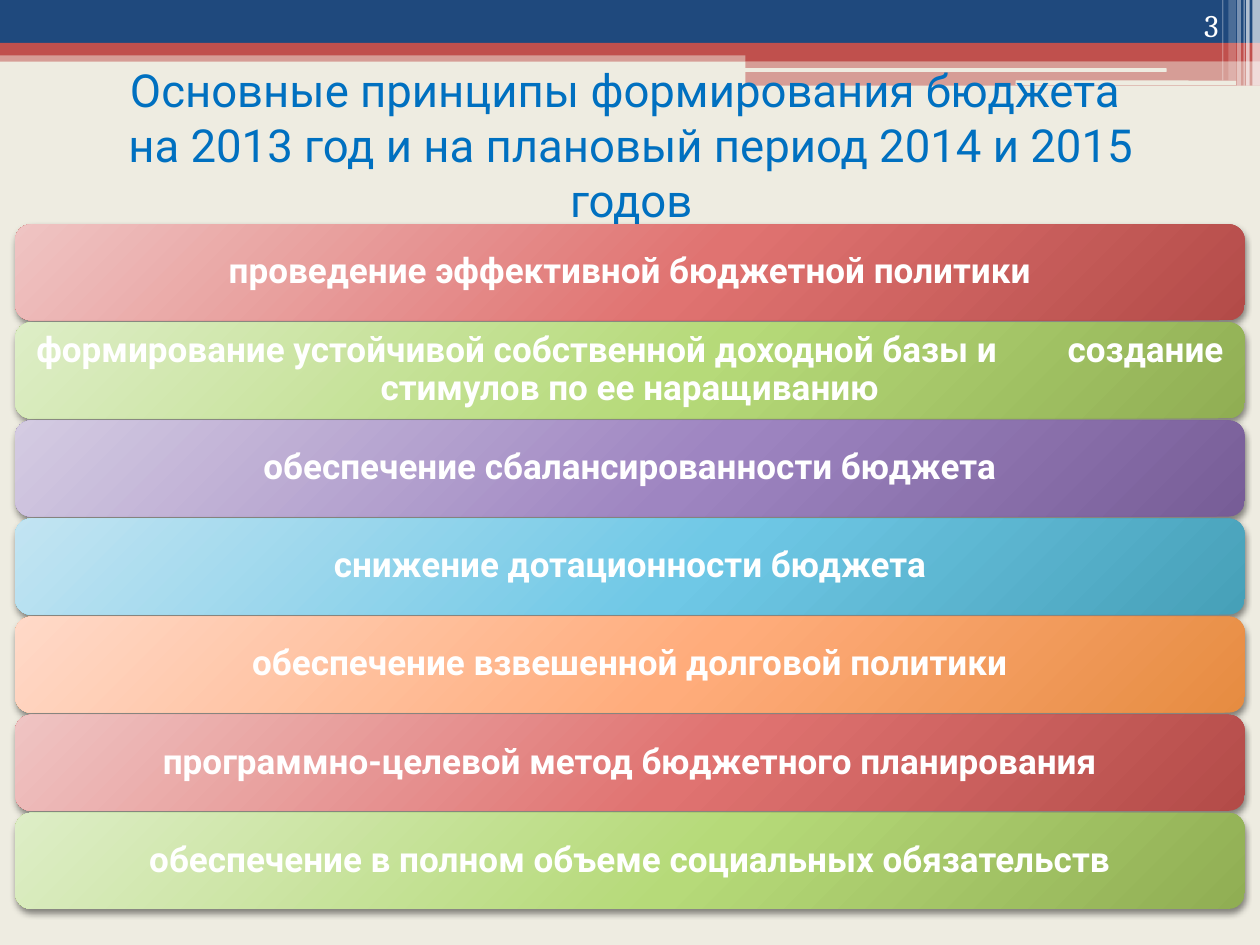
from dataclasses import dataclass

from lxml import etree
from pptx import Presentation
from pptx.dml.color import RGBColor
from pptx.enum import shapes, text
from pptx.oxml import parse_xml
from pptx.oxml.ns import nsdecls, qn
from pptx.util import Pt

COLORS = {
    "paper": "EEECE1", "navy": "1F497D", "brick": "C0504D",
    "white": "FFFFFF", "title": "0070C0", "shadow": "000000",
}
# Light, middle and dark tone of each gradient
GRADIENTS = {
    "red": ("EFC4C3", "E07371", "B34B48"),
    "green": ("DDEDC6", "B6DA79", "90AE53"),
    "violet": ("D4CBE2", "9E85C1", "775D97"),
    "blue": ("C2E4F2", "6FC8E6", "46A0B8"),
    "orange": ("FFD9C8", "FFAC7B", "E68C41"),
}
FONT = "Roboto"
ROW_LEFT, ROW_TOP, ROW_WIDTH, ROW_HEIGHT, ROW_PITCH = 8.64, 128.16, 702.72, 54.9, 56.05
WIDE_GAP = 35  # extra points after the space that stands at "|"


@dataclass(frozen=True)
class Bar:
    left: float
    top: float
    width: float
    height: float
    color: str
    opacity: int = 100
    rounded: bool = False


@dataclass(frozen=True)
class Principle:
    label: str
    gradient: str


HEADER_BARS = [
    Bar(0, 28.8, 720, 6.5, "brick", 50),
    Bar(0, 0, 720, 24.5, "navy"),
    Bar(0, 24.5, 720, 7.2, "brick"),
    Bar(426, 28, 294, 7, "brick"),
    Bar(426, 34.6, 294, 14.4, "brick", 50),
    Bar(425.5, 39, 241.2, 2.1, "paper", rounded=True),
    Bar(580.3, 46, 126, 2.7, "paper", rounded=True),
    Bar(715.7, 0, 4.3, 49, "white", 65),
    Bar(712.1, 0, 2.1, 49, "white", 65),
    Bar(710.6, 0, 0.7, 49, "white", 60),
    Bar(707, 0, 2.1, 49, "white", 40),
    Bar(702, 0, 4.3, 46, "white", 20),
    Bar(698.4, 0, 0.7, 46, "white", 30),
]
PRINCIPLES = [
    Principle("проведение эффективной бюджетной политики", "red"),
    Principle("формирование устойчивой собственной доходной базы и|"
              "создание стимулов по ее наращиванию", "green"),
    Principle("обеспечение сбалансированности бюджета", "violet"),
    Principle("снижение дотационности бюджета", "blue"),
    Principle("обеспечение взвешенной долговой политики", "orange"),
    Principle("программно-целевой метод бюджетного планирования", "red"),
    Principle("обеспечение в полном объеме социальных обязательств", "green"),
]


def rgb(name: str) -> RGBColor:
    return RGBColor.from_string(COLORS[name])


def format_runs(p, size: float, color: str, font: str = FONT, bold: bool = False) -> None:
    for r in p.runs:
        r.font.size = Pt(size)
        r.font.name = font
        r.font.bold = bold
        r.font.color.rgb = rgb(color)


def add_bar(slide, bar: Bar) -> None:
    kind = shapes.MSO_SHAPE.ROUNDED_RECTANGLE if bar.rounded else shapes.MSO_SHAPE.RECTANGLE
    sp = slide.shapes.add_shape(kind, Pt(bar.left), Pt(bar.top), Pt(bar.width), Pt(bar.height))
    sp.shadow.inherit = False
    sp.line.fill.background()
    sp.fill.solid()
    sp.fill.fore_color.rgb = rgb(bar.color)
    if bar.opacity < 100:
        color = sp.fill._xPr.find(f".//{qn('a:srgbClr')}")
        etree.SubElement(color, qn("a:alpha"), val=str(bar.opacity * 1000))


def set_glow_gradient(sp, tones: tuple[str, str, str]) -> None:
    """Fill with a circular gradient centred beyond the top left, above a soft shadow."""
    stops = "".join(f'<a:gs pos="{pos * 1000}"><a:srgbClr val="{tone}"/></a:gs>'
                    for pos, tone in zip((0, 55, 100), tones))
    fill = parse_xml(
        f'<a:gradFill {nsdecls("a")} rotWithShape="1"><a:gsLst>{stops}</a:gsLst>'
        '<a:path path="circle"><a:fillToRect l="-40000" t="-90000" r="140000" b="190000"/>'
        '</a:path></a:gradFill>')
    sp._element.spPr.find(qn("a:prstGeom")).addnext(fill)
    effects = sp._element.spPr.find(qn("a:effectLst"))
    effects.append(parse_xml(
        f'<a:outerShdw {nsdecls("a")} blurRad="{Pt(4)}" dist="{Pt(2)}" dir="5400000" '
        f'rotWithShape="0"><a:srgbClr val="{COLORS["shadow"]}"><a:alpha val="45000"/>'
        '</a:srgbClr></a:outerShdw>'))


def add_principle(slide, index: int, principle: Principle) -> None:
    sp = slide.shapes.add_shape(
        shapes.MSO_SHAPE.ROUNDED_RECTANGLE, Pt(ROW_LEFT), Pt(ROW_TOP + index * ROW_PITCH),
        Pt(ROW_WIDTH), Pt(ROW_HEIGHT))
    sp.shadow.inherit = False
    sp.line.fill.background()
    set_glow_gradient(sp, GRADIENTS[principle.gradient])
    tf = sp.text_frame
    tf.word_wrap = True
    tf.vertical_anchor = text.MSO_ANCHOR.MIDDLE
    tf.margin_left = tf.margin_right = tf.margin_top = tf.margin_bottom = Pt(6)
    p = tf.paragraphs[0]
    p.alignment = text.PP_ALIGN.CENTER
    p.line_spacing = 0.9
    before, gap, after = principle.label.partition("|")
    p.add_run().text = before
    if gap:
        space = p.add_run()
        space.text = " "
        space.font._element.set("spc", str(WIDE_GAP * 100))
        p.add_run().text = after
    format_runs(p, 20, "white", bold=True)


def add_title(slide) -> None:
    title = slide.shapes.title
    title.left, title.top, title.width, title.height = Pt(31), Pt(37.5), Pt(659.5), Pt(90)
    slide.shapes._spTree.append(title._element)  # in front of the header bars
    tf = title.text_frame
    tf.text = ("Основные принципы формирования бюджета \v"
               "на 2013 год и на плановый период 2014 и 2015 годов")
    tf.word_wrap = True
    tf.auto_size = text.MSO_AUTO_SIZE.NONE
    tf.vertical_anchor = text.MSO_ANCHOR.MIDDLE
    p = tf.paragraphs[0]
    p.alignment = text.PP_ALIGN.CENTER
    format_runs(p, 26, "title")


def add_page_number(slide, number: str) -> None:
    tf = slide.shapes.add_textbox(Pt(643.7), Pt(0), Pt(59.8), Pt(28.8)).text_frame
    tf.text = number
    tf.word_wrap = True
    tf.vertical_anchor = text.MSO_ANCHOR.BOTTOM
    p = tf.paragraphs[0]
    p.alignment = text.PP_ALIGN.RIGHT
    format_runs(p, 18, "white", font="Cambria")


def main() -> None:
    prs = Presentation()
    prs.slide_width, prs.slide_height = Pt(720), Pt(540)
    slide = prs.slides.add_slide(prs.slide_layouts.get_by_name("Title Only"))
    slide.background.fill.solid()
    slide.background.fill.fore_color.rgb = rgb("paper")
    for bar in HEADER_BARS:
        add_bar(slide, bar)
    add_title(slide)
    for index, principle in enumerate(PRINCIPLES):
        add_principle(slide, index, principle)
    add_page_number(slide, "3")
    prs.save("out.pptx")


if __name__ == "__main__":
    main()
